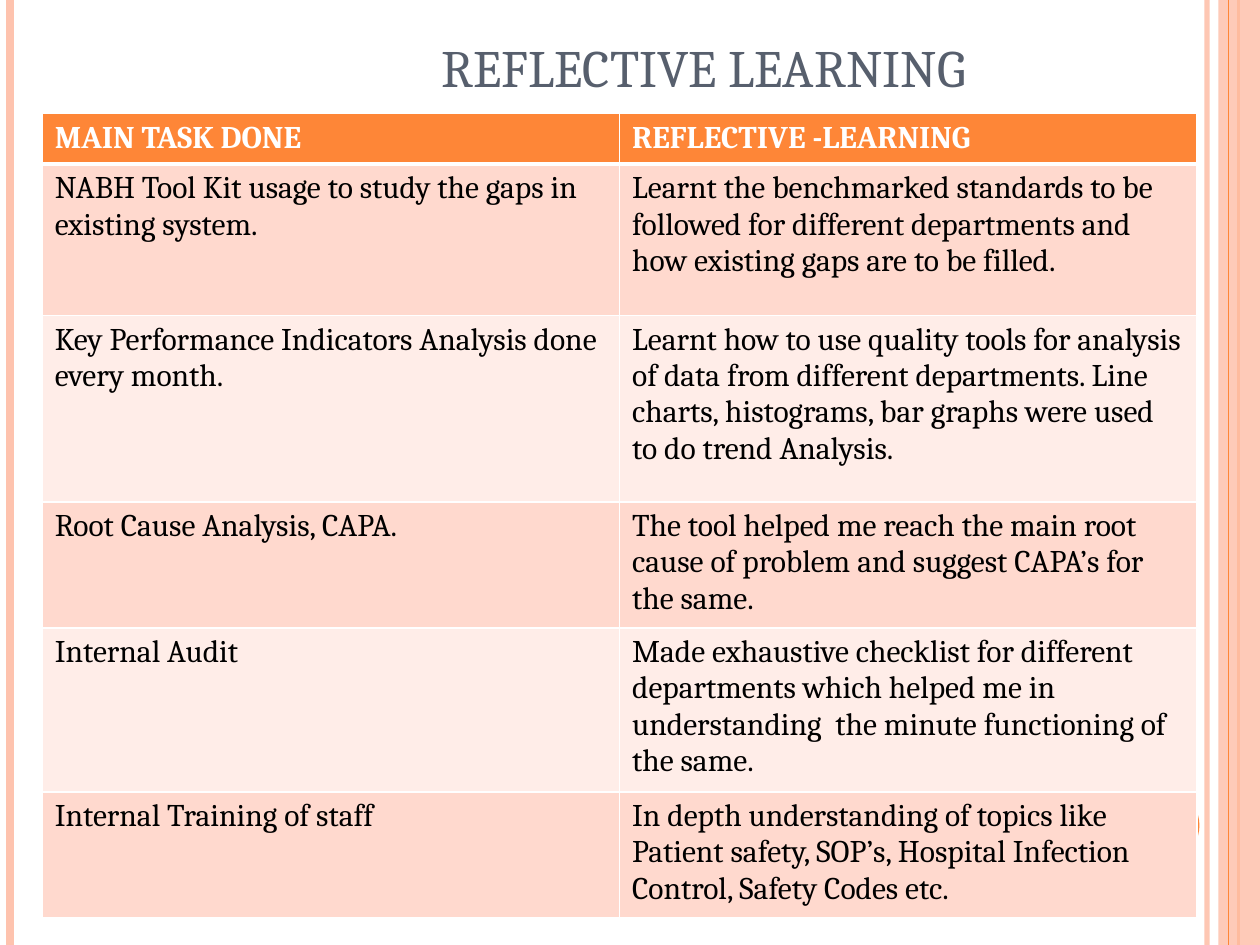
"""Build the Reflective Learning slide: a task table between striped edges."""
from lxml import etree
from pptx import Presentation
from pptx import util as u
from pptx.dml.color import RGBColor
from pptx.enum import shapes, text
from pptx.oxml import ns

FONT = "Cambria"
ORANGE = RGBColor(0xFE, 0x86, 0x37)
PEACH = RGBColor(0xFE, 0xC3, 0xAE)
BAND_DARK = RGBColor(0xFF, 0xD9, 0xCE)
BAND_LIGHT = RGBColor(0xFF, 0xED, 0xE8)
SLATE = RGBColor(0x57, 0x5F, 0x6D)
WHITE = RGBColor(0xFF, 0xFF, 0xFF)
BLACK = RGBColor(0, 0, 0)

SLIDE_WIDTH, SLIDE_HEIGHT = u.Cm(25.4), u.Cm(19.05)
TITLE = "REFLECTIVE LEARNING"
TITLE_FORMAT = {"name": FONT, "size": u.Pt(30)}
HEADER_FORMAT = {"name": FONT, "size": u.Pt(18), "bold": True}
BODY_FORMAT = {"name": FONT, "size": u.Pt(18), "bold": False}

ROWS = [
    (0.97, "MAIN TASK DONE", "REFLECTIVE -LEARNING"),
    (3.05, "NABH Tool Kit usage to study the gaps in existing system.",
     "Learnt the benchmarked standards to be followed for different departments "
     "and how existing gaps are to be filled."),
    (3.76, "Key Performance Indicators Analysis done every month.",
     "Learnt how to use quality tools for analysis of data from different departments. "
     "Line charts, histograms, bar graphs were used to do trend Analysis."),
    (1.65, "Root Cause Analysis, CAPA.",
     "The tool helped me reach the main root cause of problem and suggest CAPA’s for the same."),
    (3.05, "Internal Audit",
     "Made exhaustive checklist for different departments which helped me in "
     "understanding  the minute functioning of the same."),
    (2.36, "Internal Training of staff",
     "In depth understanding of topics like Patient safety, SOP’s, Hospital Infection "
     "Control, Safety Codes etc."),
]
BACK_STRIPES = [(24.33, PEACH, 3, 93), (0.2, PEACH, 4.5, 100), (24.97, ORANGE, 1.5, 100)]
FRONT_STRIPES = [(24.77, ORANGE, 0.75, 100)]


def set_opacity(properties, percent):
    color = properties.find(".//" + ns.qn("a:srgbClr"))
    etree.SubElement(color, ns.qn("a:alpha"), val=str(percent * 1000))


def add_stripes(slide, stripes):
    for x, color, width, opacity in stripes:
        line = slide.shapes.add_connector(
            shapes.MSO_CONNECTOR.STRAIGHT, u.Cm(x), 0, u.Cm(x), SLIDE_HEIGHT)
        line.line.color.rgb = color
        line.line.width = u.Pt(width)
        properties = line._element.spPr
        etree.SubElement(properties, ns.qn("a:effectLst"))
        if opacity < 100:
            set_opacity(properties, opacity)


def add_filled(slide, kind, box, color):
    shape = slide.shapes.add_shape(kind, *box)
    shape.shadow.inherit = False
    shape.fill.solid()
    shape.fill.fore_color.rgb = color
    shape.line.fill.background()
    return shape


def write(paragraph, content, color, values):
    run = paragraph.add_run()
    run.text = content
    run.font.color.rgb = color
    for name, value in values.items():
        setattr(run.font, name, value)


def add_borders(cell, bottom_width):
    properties = cell._tc.get_or_add_tcPr()
    for side, width in (("L", 1), ("R", 1), ("T", 1), ("B", bottom_width)):
        border = etree.SubElement(properties, ns.qn("a:ln" + side), w=str(u.Pt(width)))
        fill = etree.SubElement(border, ns.qn("a:solidFill"))
        etree.SubElement(fill, ns.qn("a:srgbClr"), val=str(WHITE))


def add_title(slide):
    box = slide.shapes.add_textbox(u.Cm(2.54), u.Cm(-1.07), u.Cm(23.28), u.Cm(3.18))
    box.text_frame.word_wrap = True
    box.text_frame.vertical_anchor = text.MSO_ANCHOR.BOTTOM
    paragraph = box.text_frame.paragraphs[0]
    paragraph.alignment = text.PP_ALIGN.CENTER
    write(paragraph, TITLE, SLATE, TITLE_FORMAT)


def add_task_table(slide):
    height = u.Cm(sum(row[0] for row in ROWS))
    table = slide.shapes.add_table(
        len(ROWS), 2, u.Cm(0.85), u.Cm(2.29), u.Cm(23.28), height).table
    for row_number, (row_height, *contents) in enumerate(ROWS):
        table.rows[row_number].height = u.Cm(row_height)
        header = row_number == 0
        band = ORANGE if header else (BAND_LIGHT, BAND_DARK)[row_number % 2]
        for column, content in enumerate(contents):
            cell = table.cell(row_number, column)
            add_borders(cell, 3 if header else 1)
            cell.fill.solid()
            cell.fill.fore_color.rgb = band
            write(cell.text_frame.paragraphs[0], content,
                  WHITE if header else BLACK, HEADER_FORMAT if header else BODY_FORMAT)


def main():
    presentation = Presentation()
    presentation.slide_width, presentation.slide_height = SLIDE_WIDTH, SLIDE_HEIGHT
    slide = presentation.slides.add_slide(presentation.slide_layouts[6])
    add_stripes(slide, BACK_STRIPES)
    edge = add_filled(slide, shapes.MSO_SHAPE.RECTANGLE,
                      (u.Cm(24.56), 0, u.Cm(0.84), SLIDE_HEIGHT), PEACH)
    set_opacity(edge._element.spPr, 87)
    add_stripes(slide, FRONT_STRIPES)
    add_filled(slide, shapes.MSO_SHAPE.OVAL,
               (u.Cm(22.66), u.Cm(15.88), u.Cm(1.52), u.Cm(1.52)), ORANGE)
    add_title(slide)
    add_task_table(slide)
    presentation.save("out.pptx")


if __name__ == "__main__":
    main()
